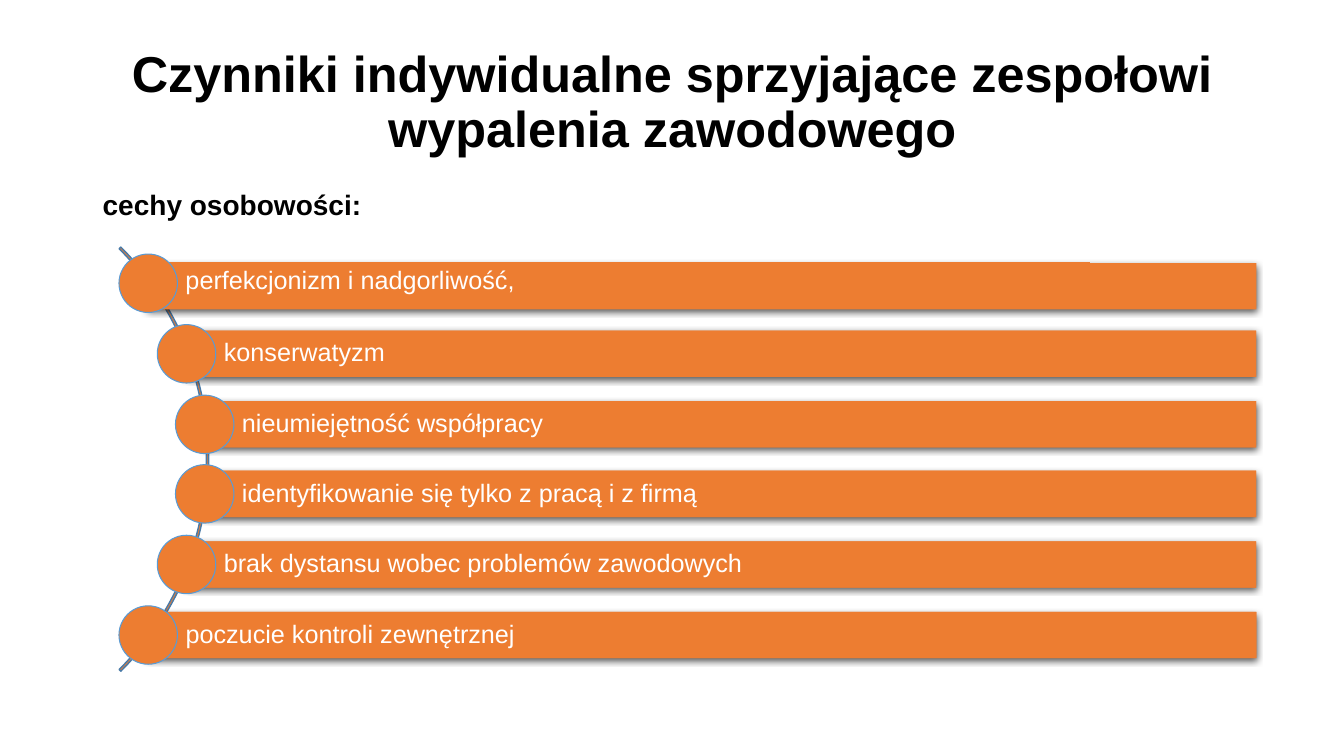
from lxml.etree import SubElement
from pptx import Presentation
from pptx.dml.color import RGBColor
from pptx.enum.shapes import MSO_SHAPE
from pptx.enum.text import MSO_ANCHOR, PP_ALIGN
from pptx.oxml.ns import qn
from pptx.util import Emu, Pt

PX = 9144  # 100 px to the inch
ORANGE = "ED7D31"
FONT = "Arial"

TITLE = "Czynniki indywidualne sprzyjające zespołowi wypalenia zawodowego"
# Label and left edge of each bar
TRAITS = [
    ("perfekcjonizm i nadgorliwość,", 147),
    ("konserwatyzm", 185),
    ("nieumiejętność współpracy", 203),
    ("identyfikowanie się tylko z pracą i z firmą", 203),
    ("brak dystansu wobec problemów zawodowych", 185),
    ("poczucie kontroli zewnętrznej", 147),
]
BAR_RIGHT, BAR_H = 1246, 46
FIRST_TOP, PITCH = 258, 69.8
CIRCLE = 58


def px(n):
    return Emu(round(n * PX))


def color(hex_code):
    return RGBColor.from_string(hex_code)


def add_shape(shapes, kind, box, line=None, width=0):
    sp = shapes.add_shape(kind, *map(px, box))
    sp.shadow.inherit = False
    sp.fill.solid()
    sp.fill.fore_color.rgb = color(ORANGE)
    if line:
        sp.line.color.rgb = color(line)
        sp.line.width = Pt(width)
    else:
        sp.line.fill.background()
    return sp


def add_shadow(sp):
    effects = sp._element.spPr.find(qn("a:effectLst"))
    shadow = SubElement(effects, qn("a:outerShdw"), blurRad=str(Pt(4.5)),
                        dist=str(Pt(1.5)), dir="5400000", rotWithShape="0")
    black = SubElement(shadow, qn("a:srgbClr"), val="000000")
    SubElement(black, qn("a:alpha"), val="63000")


def write(sp, text, size, hex_code, insets, bold=False, align=PP_ALIGN.LEFT,
          anchor=MSO_ANCHOR.MIDDLE, spacing=0.9):
    tf = sp.text_frame
    tf.word_wrap = True
    tf.vertical_anchor = anchor
    tf.margin_left, tf.margin_top, tf.margin_right, tf.margin_bottom = map(px, insets)
    p = tf.paragraphs[0]
    p.alignment = align
    p.line_spacing = spacing
    r = p.add_run()
    r.text = text
    r.font.name = FONT
    r.font.size = Pt(size)
    r.font.bold = bold
    r.font.color.rgb = color(hex_code)


def add_heading(s, box, text, size, **style):
    sp = s.shapes.add_textbox(*map(px, box))
    write(sp, text, size, "000000", (10, 5, 10, 5), bold=True, **style)


def add_trait(shapes, index, label, left):
    top = round(FIRST_TOP + PITCH * index)
    width = BAR_RIGHT - left
    bar_box = label_box = (left, top, width, BAR_H)
    if index == 0:  # the first bar sits lower, under a smaller label
        bar_box, label_box = (left, 261, width, BAR_H), (left, 260, 934, 38)
    add_shadow(add_shape(shapes, MSO_SHAPE.RECTANGLE, bar_box))
    sp = add_shape(shapes, MSO_SHAPE.RECTANGLE, label_box)
    write(sp, label, 18, "FFFFFF", (37, 6, 6, 6))
    circle_box = (left - CIRCLE / 2, top - 6, CIRCLE, CIRCLE)
    add_shape(shapes, MSO_SHAPE.OVAL, circle_box, "599BD5", 0.75)


def add_trait_list(s):
    shapes = s.shapes.add_group_shape().shapes
    arc = add_shape(shapes, MSO_SHAPE.BLOCK_ARC, (-388, 158, 595, 595), "487AA8", 1)
    for i, value in enumerate((189, 27, 0.004)):
        arc.adjustments[i] = value
    for i, (label, left) in enumerate(TRAITS):
        add_trait(shapes, i, label, left)


def main():
    prs = Presentation()
    prs.slide_width, prs.slide_height = px(1333), px(750)
    s = prs.slides.add_slide(prs.slide_layouts[6])

    # Curved list of traits
    add_trait_list(s)

    # Headings
    add_heading(s, (92, 181, 934, 49), "cechy osobowości:", 20,
                anchor=MSO_ANCHOR.TOP, spacing=1.0)
    add_heading(s, (92, 35, 1150, 136), TITLE, 36, align=PP_ALIGN.CENTER)

    prs.save("out.pptx")


if __name__ == "__main__":
    main()
